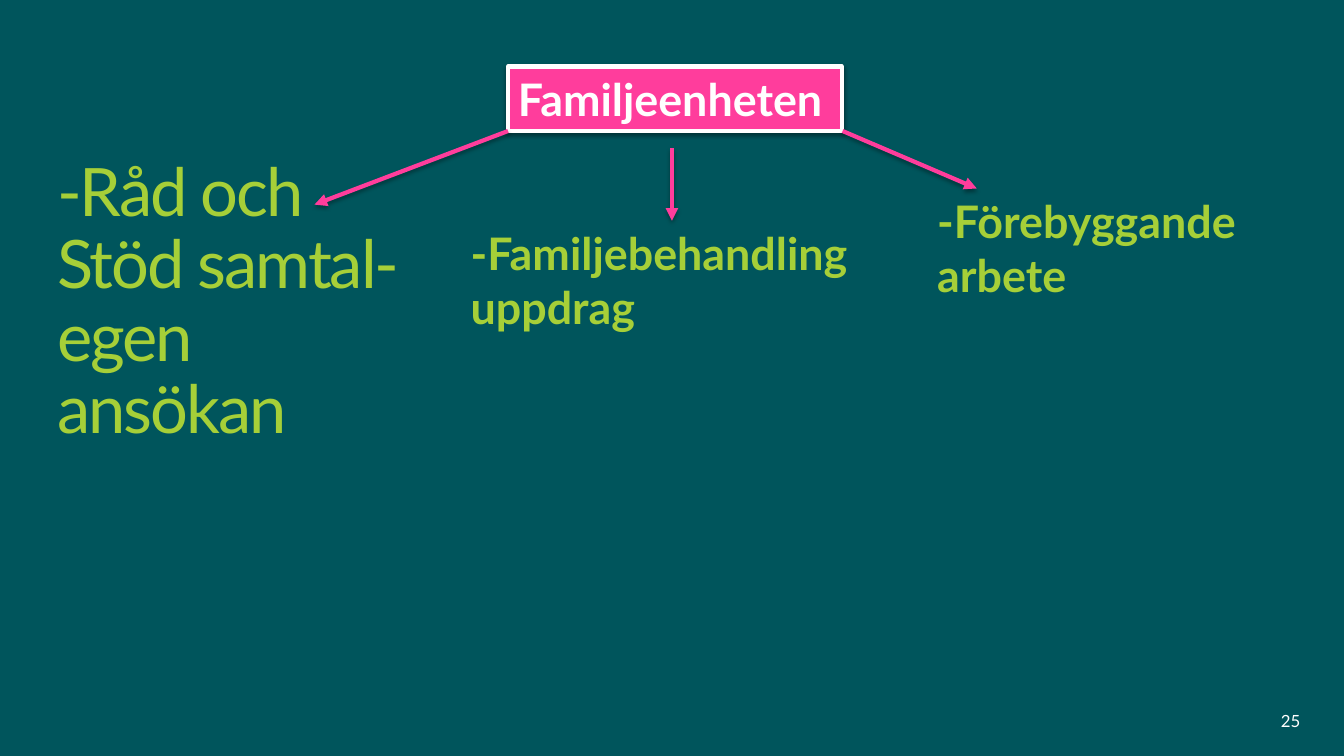
from lxml import etree
from pptx import Presentation
from pptx import util as u
from pptx.dml.color import RGBColor
from pptx.enum import shapes, text
from pptx.oxml import ns

TEAL = RGBColor(0x00, 0x55, 0x5C)
PINK = RGBColor(0xFF, 0x3D, 0x9C)
LIME = RGBColor(0xA6, 0xCF, 0x38)
WHITE = RGBColor(0xFF, 0xFF, 0xFF)

deck = Presentation()
deck.slide_width, deck.slide_height = u.Inches(13.333), u.Inches(7.5)
COLUMN, ROW = deck.slide_width / 100, deck.slide_height / 100
slide = deck.slides.add_slide(deck.slide_layouts[6])
slide.background.fill.solid()
slide.background.fill.fore_color.rgb = TEAL


def write(wording, left, top, width, height, size=32, color=LIME, bold=True,
          align=text.PP_ALIGN.LEFT, anchor=text.MSO_ANCHOR.TOP,
          fit=text.MSO_AUTO_SIZE.NONE, line_spacing=None, tracking=0):
    box = slide.shapes.add_textbox(int(left * COLUMN), int(top * ROW),
                                   int(width * COLUMN), int(height * ROW))
    frame = box.text_frame
    frame.word_wrap, frame.auto_size = True, fit
    frame.vertical_anchor = anchor
    paragraph = frame.paragraphs[0]
    paragraph.alignment, paragraph.line_spacing = align, line_spacing
    for index, line in enumerate(wording.split("\n")):
        if index:
            paragraph.add_line_break()
        run = paragraph.add_run()
        run.text = line
        run.font.name, run.font.size, run.font.bold = "Lato", u.Pt(size), bold
        run.font.color.rgb = color
        if tracking:
            run.font._element.set("spc", str(tracking))
    return box


def cast_shadow(part, blur, distance, opacity):
    effects = etree.SubElement(part._element.spPr, ns.qn("a:effectLst"))
    shadow = etree.SubElement(effects, ns.qn("a:outerShdw"), blurRad=str(u.Pt(blur)),
                              dist=str(u.Pt(distance)), dir="5400000", rotWithShape="0")
    black = etree.SubElement(shadow, ns.qn("a:srgbClr"), val="000000")
    etree.SubElement(black, ns.qn("a:alpha"), val=str(opacity * 1000))


write("25", 75, 92.67, 22.5, 5.33, size=12, color=WHITE, bold=False,
      align=text.PP_ALIGN.RIGHT, anchor=text.MSO_ANCHOR.MIDDLE)
write("-Råd och Stöd samtal-\negen ansökan", 3.52, 16.4, 27.75, 43.47, size=47.7,
      bold=False, anchor=text.MSO_ANCHOR.BOTTOM, line_spacing=0.9, tracking=-150)

grow = text.MSO_AUTO_SIZE.SHAPE_TO_FIT_TEXT
unit = write("Familjeenheten", 37.8, 8.8, 24.83, 8.53, color=WHITE, fit=grow)
unit.fill.solid()
unit.fill.fore_color.rgb = PINK
unit.line.color.rgb = WHITE
unit.line.width = u.Pt(3)
cast_shadow(unit, 3.1, 1.6, 38)

write("-Familjebehandling uppdrag", 34.28, 29.2, 31.42, 15.73, fit=grow)
write("-Förebyggande arbete", 69, 24.93, 28.5, 15.73, fit=grow)

for x1, y1, x2, y2 in [(62.7, 17.33, 72.68, 24.93),
                       (50, 19.6, 50, 29.2),
                       (37.8, 17.33, 23.4, 27.07)]:
    branch = slide.shapes.add_connector(
        shapes.MSO_CONNECTOR.STRAIGHT, int(x1 * COLUMN), int(y1 * ROW),
        int(x2 * COLUMN), int(y2 * ROW))
    branch.line.color.rgb = PINK
    branch.line.width = u.Pt(3)
    etree.SubElement(branch.line._get_or_add_ln(), ns.qn("a:tailEnd"), type="triangle")
    cast_shadow(branch, 3.1, 1.8, 35)

deck.save("out.pptx")
